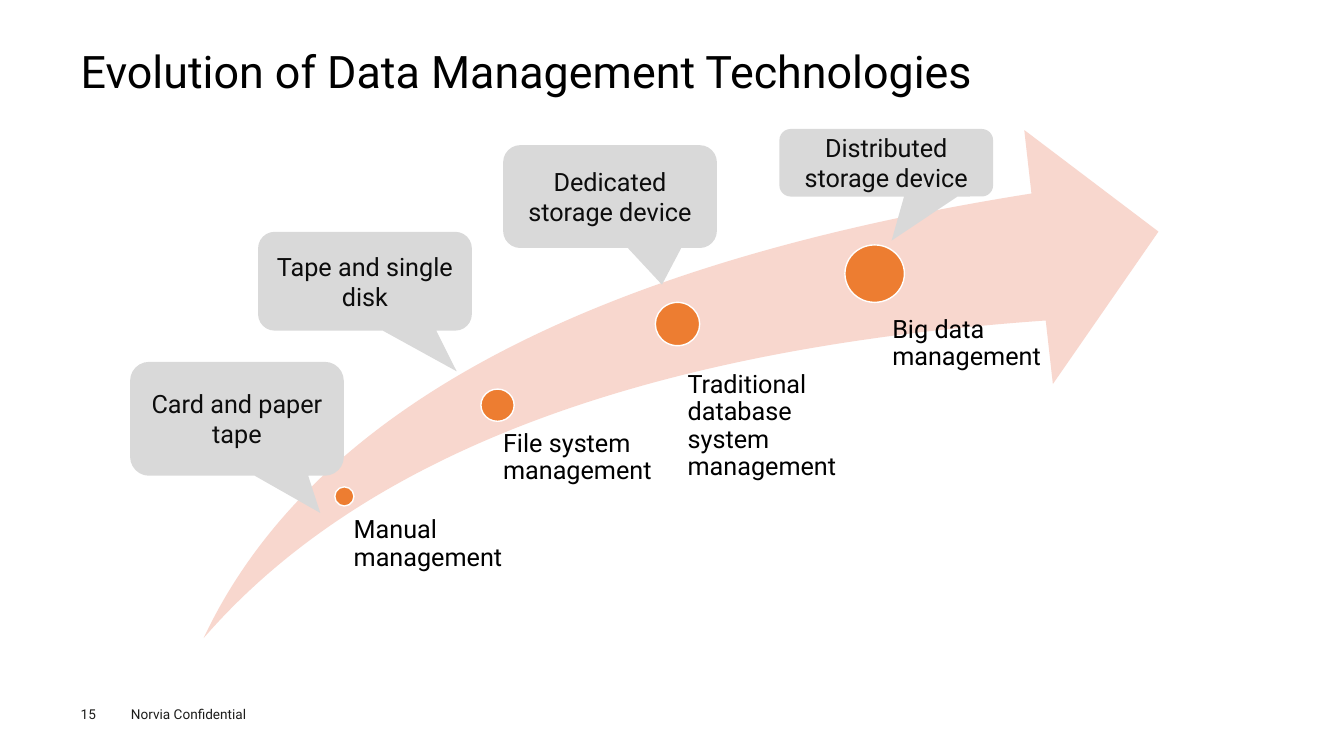
from dataclasses import dataclass

from pptx import Presentation
from pptx.dml.color import RGBColor
from pptx.enum.shapes import MSO_SHAPE
from pptx.enum.text import MSO_ANCHOR, PP_ALIGN
from pptx.util import Inches, Pt

SWOOSH = MSO_SHAPE.SWOOSH_ARROW
OVAL = MSO_SHAPE.OVAL
CALLOUT = MSO_SHAPE.ROUNDED_RECTANGULAR_CALLOUT
MIDDLE = MSO_ANCHOR.MIDDLE
LEFT = PP_ALIGN.LEFT
CENTER = PP_ALIGN.CENTER


@dataclass(frozen=True)
class Theme:
    """Colours, font and type sizes of the slide."""

    font: str = "Roboto"
    black: str = "000000"
    callout_text: str = "0D0D0D"
    footer_text: str = "1D1D1B"
    white: str = "FFFFFF"
    swoosh: str = "F8D7CE"
    marker: str = "ED7D31"
    callout: str = "D9D9D9"
    title_size: float = 32
    body_size: float = 18
    footer_size: float = 9.7


THEME = Theme()

MARKERS = [
    (3.32, 4.83, 0.19, 0.19),
    (4.77, 3.86, 0.33, 0.32),
    (6.5, 3, 0.44, 0.43),
    (8.38, 2.43, 0.59, 0.57),
]
STAGES = [
    ("Manual management", (3.41, 5.13, 1.63, 1.2), 0.1),
    ("File system management", (4.81, 4.27, 2.01, 1.46), 0.18),
    ("Traditional database system management", (6.59, 3.69, 2.01, 2.16), 0.23),
    ("Big data management", (8.54, 3.14, 2.01, 2.77), 0.31),
]
STORAGE_MEDIA = [
    ("Card and paper tape", (1.29, 3.59, 2.12, 1.13), (0.39, 0.827)),
    ("Tape and single disk", (2.56, 2.3, 2.12, 0.98), (0.429, 0.912)),
    ("Dedicated storage device", (4.99, 1.44, 2.12, 1.02), (0.243, 0.857)),
    ("Distributed storage device", (7.73, 1.28, 2.12, 0.67), (0.025, 1.153)),
]


def write(frame, text, size, color, align=LEFT, spacing=1.0):
    """Write one wrapped paragraph into a text frame."""
    frame.word_wrap = True
    para = frame.paragraphs[0]
    para.alignment = align
    para.line_spacing = spacing
    span = para.add_run()
    span.text = text
    span.font.name = THEME.font
    span.font.size = Pt(size)
    span.font.color.rgb = RGBColor.from_string(color)


def add_text(page, text, bounds, size, color, inset=0, spacing=1.0):
    """Add a text box with a left inset and no other margins."""
    box = page.shapes.add_textbox(*map(Inches, bounds))
    frame = box.text_frame
    frame.margin_left = Inches(inset)
    frame.margin_top = frame.margin_right = frame.margin_bottom = 0
    write(frame, text, size, color, spacing=spacing)
    return box


def add_shape(page, kind, bounds, fill, adjustments=(), line=None):
    """Add a flat filled preset shape, with an outline if a colour is given."""
    shape = page.shapes.add_shape(kind, *map(Inches, bounds))
    shape.shadow.inherit = False
    shape.fill.solid()
    shape.fill.fore_color.rgb = RGBColor.from_string(fill)
    if line:
        shape.line.color.rgb = RGBColor.from_string(line)
        shape.line.width = Pt(1)
    else:
        shape.line.fill.background()
    for index, value in enumerate(adjustments):
        shape.adjustments[index] = value
    return shape


def add_callout(page, text, bounds, tip):
    """Add a rounded callout whose tail ends at the given tip."""
    callout = add_shape(page, CALLOUT, bounds, THEME.callout, (*tip, 0.167))
    callout.text_frame.vertical_anchor = MIDDLE
    write(callout.text_frame, text, THEME.body_size, THEME.callout_text, CENTER)


def add_footer(page):
    """Add the page number and the confidentiality note."""
    note = add_text(page, "Norvia Confidential", (1.2, 6.95, 1.6, 0.27),
                    THEME.footer_size, THEME.footer_text, 0.1)
    note.text_frame.margin_top = Inches(0.05)
    add_text(page, "15", (0.8, 7, 0.55, 0.16),
             THEME.footer_size, THEME.footer_text)


def main():
    """Build the slide and save it."""
    deck = Presentation()
    deck.slide_width = Inches(13.33)
    deck.slide_height = Inches(7.5)
    page = deck.slides.add_slide(deck.slide_layouts[6])
    add_footer(page)
    add_text(page, "Evolution of Data Management Technologies",
             (0.8, 0.49, 11.73, 0.54), THEME.title_size, THEME.black,
             spacing=0.9)
    add_shape(page, SWOOSH, (2.02, 1.29, 9.47, 5.04), THEME.swoosh, (0.25, 0.25))
    for bounds in MARKERS:
        add_shape(page, OVAL, bounds, THEME.marker, line=THEME.white)
    for text, bounds, inset in STAGES:
        add_text(page, text, bounds, THEME.body_size, THEME.black, inset, 0.9)
    for text, bounds, tip in STORAGE_MEDIA:
        add_callout(page, text, bounds, tip)
    deck.save("out.pptx")


if __name__ == "__main__":
    main()
